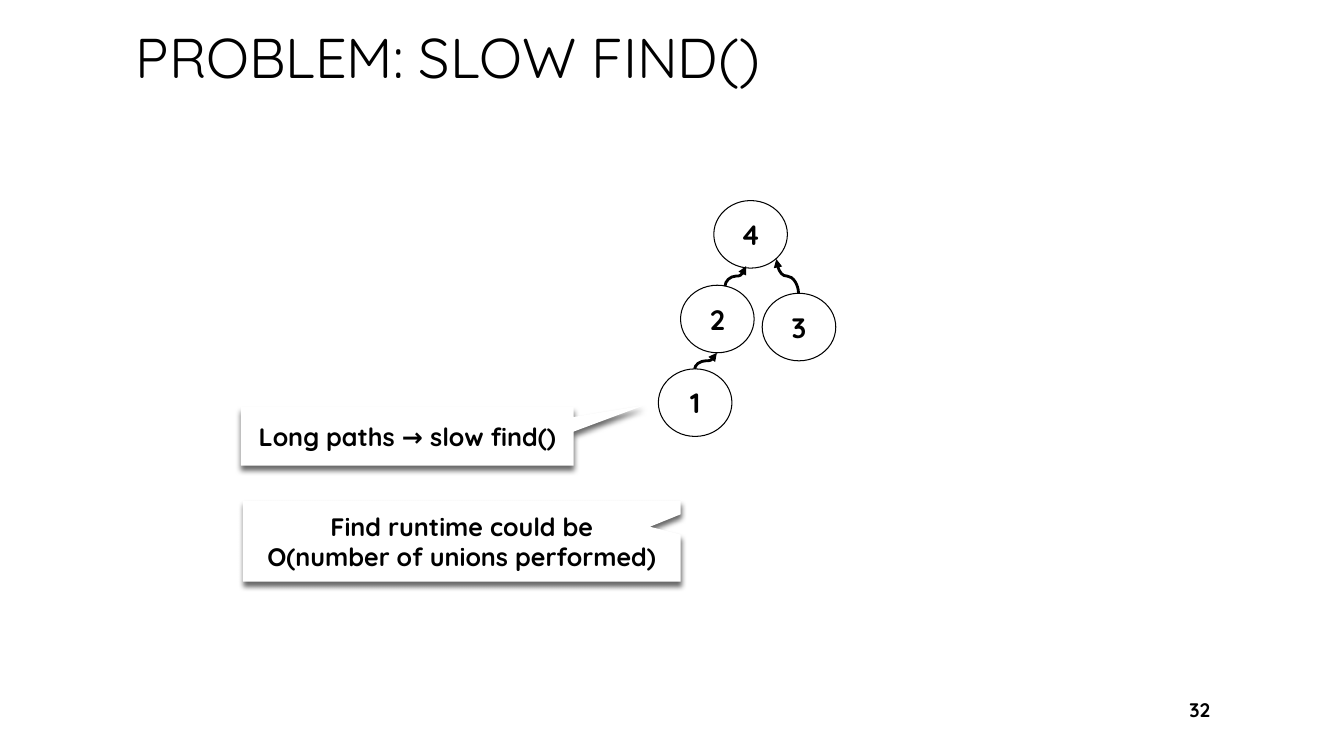
from dataclasses import dataclass
from lxml.etree import SubElement
from pptx import Presentation
from pptx.dml.color import RGBColor
from pptx.enum.shapes import MSO_CONNECTOR as Connector, MSO_SHAPE as Shape
from pptx.enum.text import MSO_ANCHOR as Anchor, PP_ALIGN as Align
from pptx.oxml.ns import qn
from pptx.util import Inches, Pt


@dataclass(frozen=True)
class Theme:
    font: str = "Quicksand"
    ink: RGBColor = RGBColor(0, 0, 0)
    paper: RGBColor = RGBColor(255, 255, 255)
    title_size: int = 40
    node_size: int = 20
    callout_size: int = 18
    number_size: int = 14
    outline: float = 0.75
    arrow: float = 2


THEME = Theme()
NODE_WIDTH, NODE_HEIGHT = 0.73, 0.67


def write(shape, text, size, align, bold=True, wrap=True):
    frame = shape.text_frame
    frame.text = text
    frame.word_wrap = wrap
    frame.vertical_anchor = Anchor.MIDDLE
    for paragraph in frame.paragraphs:
        paragraph.alignment = align
        for run in paragraph.runs:
            run.font.name = THEME.font
            run.font.size = Pt(size)
            run.font.bold = bold
            run.font.color.rgb = THEME.ink


def add_label(slide, box, text, size, align, bold):
    label = slide.shapes.add_textbox(*map(Inches, box))
    write(label, text, size, align, bold)


def add_white_shape(slide, kind, box):
    shape = slide.shapes.add_shape(kind, *map(Inches, box))
    shape.shadow.inherit = False
    shape.fill.solid()
    shape.fill.fore_color.rgb = THEME.paper
    return shape


def add_node(slide, left, top, text):
    node = add_white_shape(slide, Shape.OVAL, (left, top, NODE_WIDTH, NODE_HEIGHT))
    node.line.color.rgb = THEME.ink
    node.line.width = Pt(THEME.outline)
    write(node, text, THEME.node_size, Align.CENTER, wrap=False)


def add_upward_curve(slide, start, end):
    center_x, center_y = (start[0] + end[0]) / 2, (start[1] + end[1]) / 2
    turned = [
        (center_x + y - center_y, center_y - x + center_x) for x, y in (start, end)
    ]
    curve = slide.shapes.add_connector(
        Connector.CURVE, *(Inches(value) for point in turned for value in point)
    )
    curve.line.color.rgb = THEME.ink
    curve.line.width = Pt(THEME.arrow)
    properties = curve._element.spPr
    properties.find(qn("a:xfrm")).set("rot", str(90 * 60000))
    SubElement(properties.find(qn("a:ln")), qn("a:tailEnd"), type="triangle")
    SubElement(properties, qn("a:effectLst"))


def add_tree(slide, left, top):
    nodes = {"4": (0.55, 0), "3": (1.03, 0.92), "2": (0.22, 0.84), "1": (0, 1.67)}
    arrows = [
        ((1.39, 0.92), (1.17, 0.58)),
        ((0.36, 1.67), (0.58, 1.51)),
        ((0.66, 0.85), (0.87, 0.65)),
    ]
    for text, (x, y) in nodes.items():
        add_node(slide, left + x, top + y, text)
    for arrow in arrows:
        add_upward_curve(slide, *((left + x, top + y) for x, y in arrow))


def add_callout(slide, box, tip, text):
    callout = add_white_shape(slide, Shape.RECTANGULAR_CALLOUT, box)
    callout.adjustments[0], callout.adjustments[1] = tip
    callout.line.fill.background()
    effects = callout._element.spPr.find(qn("a:effectLst"))
    shadow = SubElement(
        effects,
        qn("a:outerShdw"),
        blurRad=str(Pt(4)),
        dist=str(Pt(3)),
        dir=str(90 * 60000),
        algn="ctr",
        rotWithShape="0",
    )
    color = SubElement(shadow, qn("a:srgbClr"), val=str(THEME.ink))
    SubElement(color, qn("a:alpha"), val="60000")
    write(callout, text, THEME.callout_size, Align.CENTER)


def main():
    presentation = Presentation()
    presentation.slide_width = Inches(13.33)
    presentation.slide_height = Inches(7.5)
    slide = presentation.slides.add_slide(presentation.slide_layouts[6])
    add_label(slide, (1.25, 0, 10.83, 1.12), "PROBLEM: SLOW FIND()",
              THEME.title_size, Align.LEFT, False)
    add_label(slide, (11.5, 6.84, 0.6, 0.4), "32",
              THEME.number_size, Align.RIGHT, True)
    add_tree(slide, 6.53, 1.99)
    add_callout(slide, (2.39, 4.04, 3.3, 0.58), (0.71, -0.53),
                "Long paths → slow find()")
    add_callout(slide, (2.41, 4.97, 4.34, 0.8), (0.43, -0.18),
                "Find runtime could be\vO(number of unions performed)")
    presentation.save("out.pptx")


if __name__ == "__main__":
    main()
